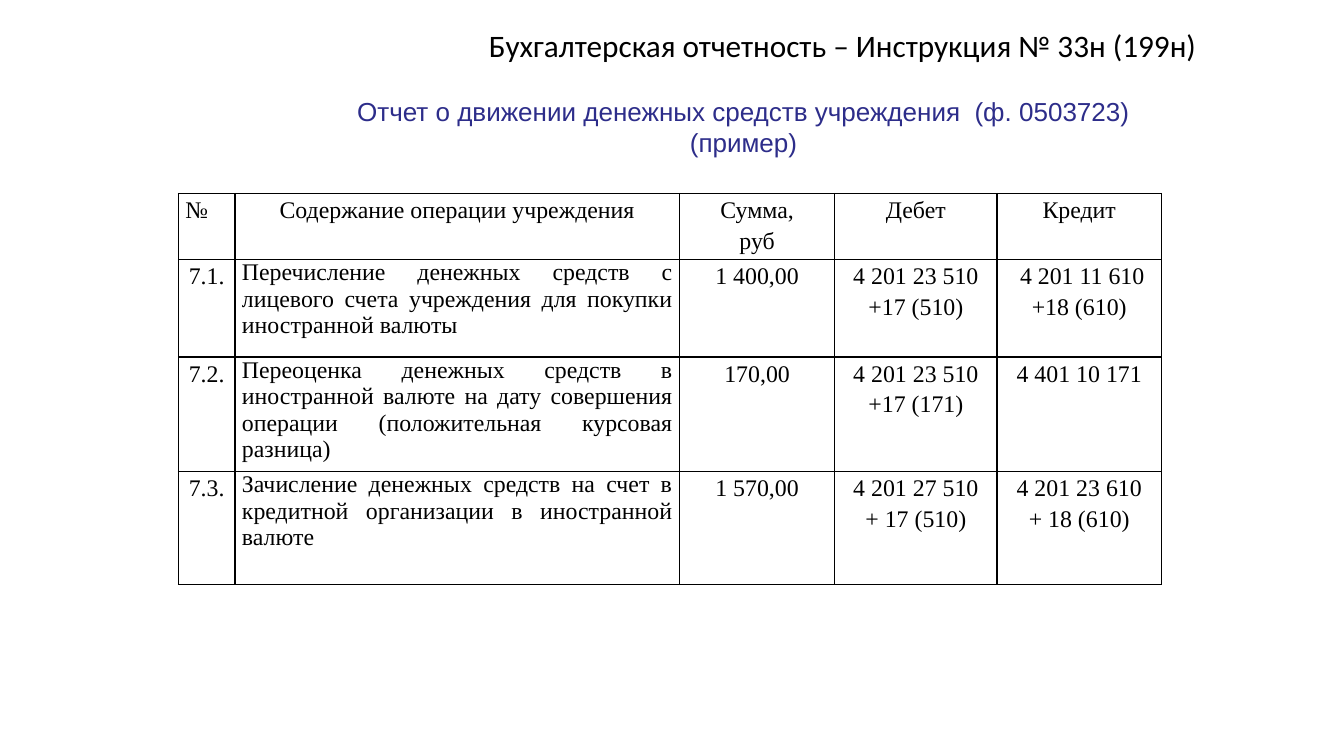
from dataclasses import dataclass

from lxml import etree
from pptx import Presentation
from pptx.dml.color import RGBColor
from pptx.enum.text import MSO_ANCHOR, PP_ALIGN
from pptx.oxml.ns import qn
from pptx.util import Inches, Pt

LEFT, MID, JUST = PP_ALIGN.LEFT, PP_ALIGN.CENTER, PP_ALIGN.JUSTIFY
TOP, CENTER = MSO_ANCHOR.TOP, MSO_ANCHOR.MIDDLE
BLACK = RGBColor(0x00, 0x00, 0x00)
BLUE = RGBColor(0x2D, 0x2D, 0x8A)
WIDE, HIGH = Inches(13.33), Inches(7.5)


@dataclass(frozen=True)
class Area:
    """Place on the slide, in percent of its width and height."""
    left: float
    top: float
    width: float
    height: float

    def box(self) -> tuple[int, int, int, int]:
        return (across(self.left), down(self.top),
                across(self.width), down(self.height))


@dataclass(frozen=True)
class Style:
    font: str
    size: float
    color: RGBColor
    align: PP_ALIGN
    lead: float = 1.0


@dataclass(frozen=True)
class Entry:
    """One row of the table; a line break parts two paragraphs."""
    mark: str
    deed: str
    total: str
    debit: str
    credit: str

    def cells(self) -> list[str]:
        return [self.mark, self.deed, self.total, self.debit, self.credit]


HEAD = Style("Calibri", 22.3, BLACK, LEFT, 0.8)
SUB = Style("Arial", 18.6, BLUE, MID)
FACE = "Times New Roman"
START = Style(FACE, 17, BLACK, LEFT, 1.15)
DATA = Style(FACE, 17, BLACK, MID, 1.15)
PROSE = Style(FACE, 17, BLACK, JUST)

TITLE = Area(35.63, 0.93, 64.37, 10.93)
NOTE = Area(24.23, 12, 62.19, 9.6)
GRID = Area(13.28, 25.6, 73.14, 51.33)
COLS = [4.2, 33.08, 11.55, 12.08, 12.23]
ROWS = [8.53, 12.93, 14.93, 14.93]

ENTRIES = [
    Entry("№", "Содержание операции учреждения", "Сумма,\nруб", "Дебет", "Кредит"),
    Entry("7.1.",
          "Перечисление денежных средств с лицевого счета учреждения "
          "для покупки иностранной валюты",
          "1 400,00", "4 201 23 510\n+17 (510)", " 4 201 11 610\n+18 (610)"),
    Entry("7.2.",
          "Переоценка денежных средств в иностранной валюте на дату "
          "совершения операции (положительная курсовая разница)",
          "170,00", "4 201 23 510\n+17 (171)", "4 401 10 171"),
    Entry("7.3.",
          "Зачисление денежных средств на счет в кредитной организации "
          "в иностранной валюте",
          "1 570,00", "4 201 27 510\n+ 17 (510)", "4 201 23 610\n+ 18 (610)"),
]


def across(share: float) -> int:
    return round(WIDE * share / 100)


def down(share: float) -> int:
    return round(HIGH * share / 100)


def write(frame, text: str, style: Style) -> None:
    frame.word_wrap = True
    for i, line in enumerate(text.split("\n")):
        para = frame.add_paragraph() if i else frame.paragraphs[0]
        para.alignment = style.align
        para.line_spacing = style.lead
        para.space_before = para.space_after = Pt(0)
        run = para.add_run()
        run.text = line
        run.font.name = style.font
        run.font.size = Pt(style.size)
        run.font.color.rgb = style.color


def frame_cell(cell) -> None:
    """Rule all four sides of a cell in black."""
    props = cell._tc.get_or_add_tcPr()
    for i, side in enumerate(("lnL", "lnR", "lnT", "lnB")):
        line = etree.Element(qn(f"a:{side}"), w=str(Pt(1)))
        fill = etree.SubElement(line, qn("a:solidFill"))
        etree.SubElement(fill, qn("a:srgbClr"), val=str(BLACK))
        props.insert(i, line)


def pick(row: int, col: int) -> Style:
    if row == 0:
        return START if col == 0 else DATA
    return PROSE if col == 1 else DATA


def add_grid(slide) -> None:
    table = slide.shapes.add_table(len(ROWS), len(COLS), *GRID.box()).table
    table.first_row = table.horz_banding = False
    for col, share in zip(table.columns, COLS):
        col.width = across(share)
    for row, share in zip(table.rows, ROWS):
        row.height = down(share)
    for r, entry in enumerate(ENTRIES):
        for c, text in enumerate(entry.cells()):
            cell = table.cell(r, c)
            cell.margin_left = cell.margin_right = Inches(0.07)
            cell.margin_top = cell.margin_bottom = 0
            cell.vertical_anchor = TOP
            cell.fill.background()
            frame_cell(cell)
            write(cell.text_frame, text, pick(r, c))


def main() -> None:
    deck = Presentation()
    deck.slide_width, deck.slide_height = WIDE, HIGH
    slide = deck.slides.add_slide(deck.slide_layouts[5])

    # Title
    title = slide.shapes.title
    title.left, title.top, title.width, title.height = TITLE.box()
    title.text_frame.vertical_anchor = CENTER
    write(title.text_frame, "Бухгалтерская отчетность – Инструкция № 33н (199н)", HEAD)

    # Subtitle
    note = slide.shapes.add_textbox(*NOTE.box())
    write(note.text_frame,
          "Отчет о движении денежных средств учреждения  (ф. 0503723)\n(пример)", SUB)

    # Table of operations
    add_grid(slide)
    deck.save("out.pptx")


if __name__ == "__main__":
    main()
